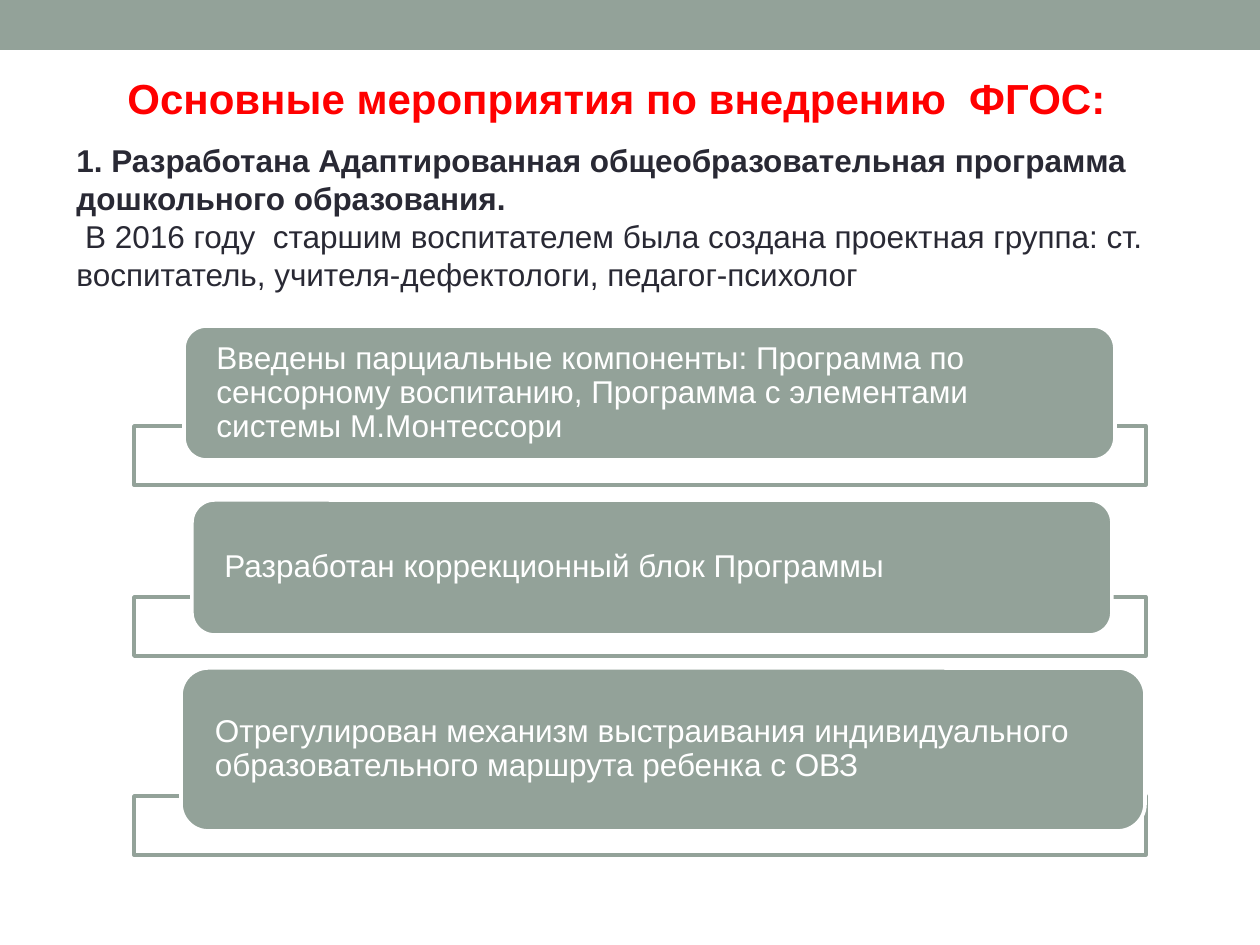
import pptx
import pptx.dml.color
import pptx.enum.shapes
import pptx.enum.text
import pptx.oxml
import pptx.oxml.ns
import pptx.util

EMU_PER_PX = 914400 // 126
SAGE, WHITE, RED, INK = "93A299", "FFFFFF", "FF0000", "292934"


def px(length):
    return pptx.util.Emu(length * EMU_PER_PX)


def color(value):
    return pptx.dml.color.RGBColor.from_string(value)


def write(paragraph, text, size=18, fill=INK, bold=False, font="Arial"):
    run = paragraph.add_run()
    run.text = text
    run.font.name = font
    run.font.size = pptx.util.Pt(size)
    run.font.bold = bold
    run.font.color.rgb = color(fill)


class SlideBuilder:
    """Holds the current slide and its shared style."""

    outline = 2.08
    kinds = pptx.enum.shapes.MSO_SHAPE

    def __init__(self, slide):
        self.slide = slide

    def box(self, kind, bounds, fill, line=None):
        shape = self.slide.shapes.add_shape(kind, *map(px, bounds))
        shape.shadow.inherit = False
        shape.fill.solid()
        shape.fill.fore_color.rgb = color(fill)
        if line:
            shape.line.color.rgb = color(line)
            shape.line.width = pptx.util.Pt(self.outline)
        else:
            shape.line.fill.background()
        return shape

    def text_box(self, bounds):
        """Adds a wrapping text box and returns its first paragraph."""
        frame = self.slide.shapes.add_textbox(*map(px, bounds)).text_frame
        frame.word_wrap = True
        frame.auto_size = pptx.enum.text.MSO_AUTO_SIZE.SHAPE_TO_FIT_TEXT
        return frame.paragraphs[0]

    def tray(self, top):
        """Adds the outlined, slightly transparent strip behind a card."""
        shape = self.box(self.kinds.RECTANGLE, (134, top, 1012, 59), WHITE, SAGE)
        rgb = shape.fill._xPr.find(".//" + pptx.oxml.ns.qn("a:srgbClr"))
        rgb.append(pptx.oxml.parse_xml(
            f'<a:alpha {pptx.oxml.ns.nsdecls("a")} val="90000"/>'))

    def card(self, bounds, text):
        shape = self.box(self.kinds.ROUNDED_RECTANGLE, bounds, SAGE, WHITE)
        frame = shape.text_frame
        frame.word_wrap = True
        frame.vertical_anchor = pptx.enum.text.MSO_ANCHOR.MIDDLE
        frame.margin_left = frame.margin_right = px(26)
        frame.margin_top = frame.margin_bottom = 0
        paragraph = frame.paragraphs[0]
        paragraph.alignment = pptx.enum.text.PP_ALIGN.LEFT
        paragraph.line_spacing = 0.9
        write(paragraph, text, fill=WHITE)


MEASURES = [
    (426, (184, 326, 931, 134),
     "Введены парциальные компоненты: Программа по сенсорному воспитанию, "
     "Программа с элементами системы М.Монтессори"),
    (597, (192, 500, 920, 135), "Разработан коррекционный блок Программы"),
    (796, (181, 668, 964, 163),
     "Отрегулирован механизм выстраивания индивидуального "
     "образовательного маршрута ребенка с ОВЗ"),
]


def main():
    presentation = pptx.Presentation()
    presentation.slide_width, presentation.slide_height = px(1260), px(945)
    builder = SlideBuilder(
        presentation.slides.add_slide(presentation.slide_layouts[6]))

    builder.box(builder.kinds.RECTANGLE, (0, 0, 1260, 50), SAGE)

    body = builder.text_box((64, 135, 1142, 165))
    write(body, "1. Разработана Адаптированная общеобразовательная программа "
                "дошкольного образования.", bold=True)
    body.add_line_break()
    write(body, " В 2016 году  старшим воспитателем была создана проектная "
                "группа: ст. воспитатель, учителя-дефектологи, "
                "педагог-психолог")

    for tray_top, card_bounds, text in MEASURES:
        builder.tray(tray_top)
        builder.card(card_bounds, text)

    title = builder.text_box((115, 66, 1091, 63))
    write(title, "Основные мероприятия по внедрению  ФГОС:",
          size=24, fill=RED, bold=True)

    presentation.save("out.pptx")


if __name__ == "__main__":
    main()
